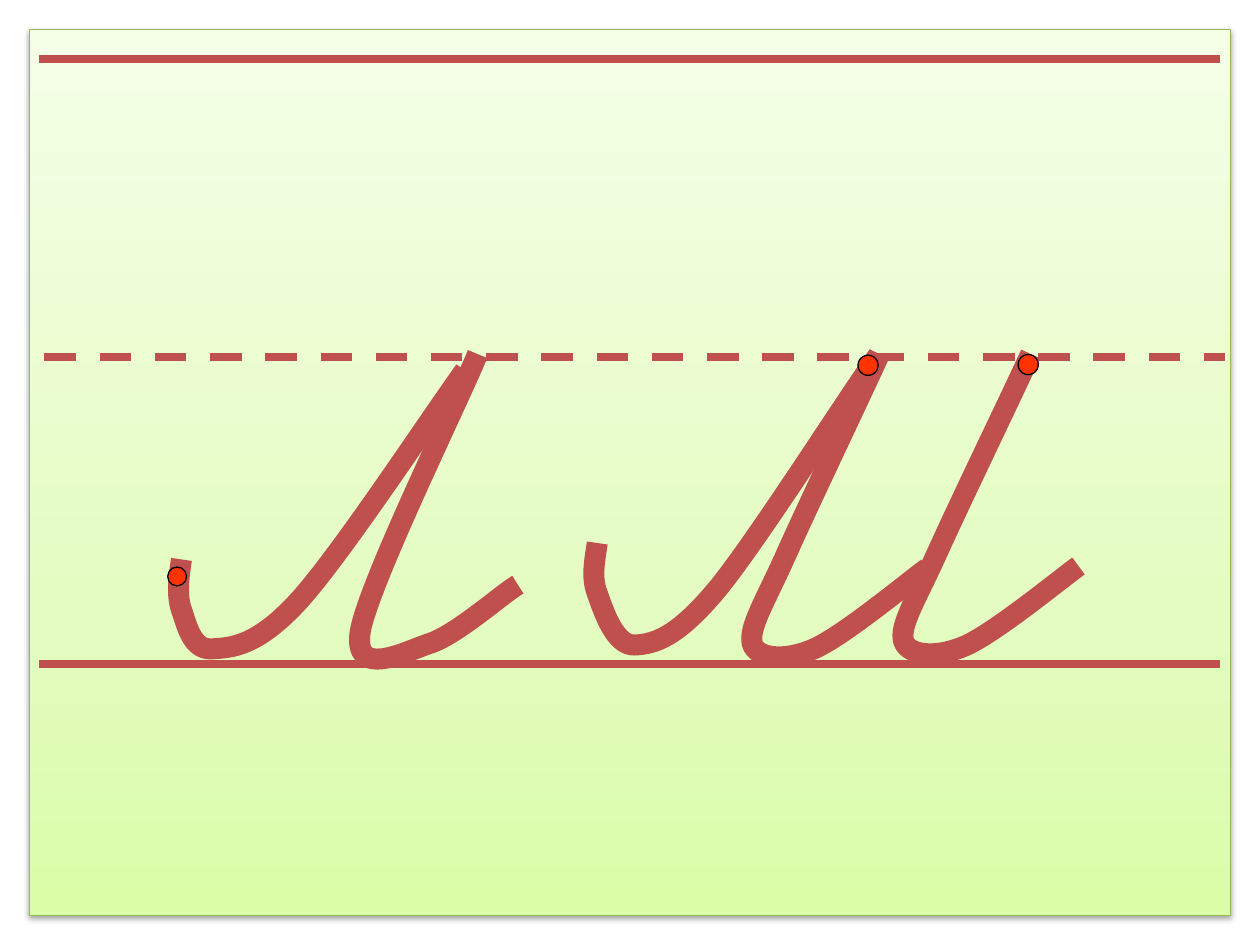
from copy import deepcopy

from lxml.etree import SubElement
from pptx import Presentation
from pptx.dml.color import RGBColor
from pptx.enum.dml import MSO_LINE
from pptx.enum.shapes import MSO_CONNECTOR, MSO_SHAPE
from pptx.oxml.ns import qn
from pptx.util import Pt

INK, DOT, BLACK = "C0504D", "FF3300", "000000"

# Pen strokes in points: a start, then three points for each Bezier segment
SHORT_RISE = [(2.9, 108), (1.4, 118.1), (0, 128.2), (2.9, 136.8),
              (5.8, 144.7), (8.6, 159.8), (20.2, 159.1),
              (31, 158.4), (45.4, 158.4), (69.8, 131.8),
              (93.6, 105.8), (144.7, 28.1), (164.9, 0)]
LONG_RISE = [(3.6, 107.3), (2.2, 117.4), (0, 126.7), (3.6, 136.1),
             (7.2, 146.2), (13.7, 166.3), (25.2, 165.6),
             (36.7, 164.9), (49, 161.3), (72, 133.9),
             (95, 105.8), (144.7, 27.4), (164.2, 0)]
NARROW_HOOK = [(94.3, 131.8), (85.7, 136.8), (58.3, 161.3), (43.2, 165.6),
               (28.8, 170.6), (0, 185.8), (4.3, 158.4),
               (9.4, 130.3), (60.5, 26.6), (71.3, 0)]
WIDE_HOOK = [(102.2, 122.4), (91.4, 130.3), (54, 161.3), (37.4, 168.5),
             (20.9, 175.7), (5, 174.2), (2.2, 165.6),
             (0, 156.2), (9.4, 141.8), (21.6, 114.5),
             (33.8, 87.1), (64.1, 23.8), (74.9, 0)]


def rgb(value):
    return RGBColor.from_string(value)


def set_line(shape, color, width):
    shape.line.color.rgb = rgb(color)
    shape.line.width = Pt(width)


def add_stroke(shapes, points, x, y, stretch=1):
    nodes = [(Pt(x + px), Pt(y + py * stretch)) for px, py in points]
    builder = shapes.build_freeform(*nodes[0])
    builder.add_line_segments(nodes[1:], close=False)
    sp = builder.convert_to_shape()
    # Turn each three line segments into one cubic curve
    outline = sp._element.spPr.find(".//" + qn("a:path"))
    for i, segment in enumerate(outline.findall(qn("a:lnTo"))):
        if i % 3 == 0:
            curve = SubElement(outline, qn("a:cubicBezTo"))
        curve.append(segment[0])
        outline.remove(segment)
    sp.shadow.inherit = False
    sp.fill.background()
    set_line(sp, INK, 12)


def add_dot(shapes, x, y, size):
    sp = shapes.add_shape(MSO_SHAPE.FLOWCHART_CONNECTOR,
                          Pt(x), Pt(y), Pt(size), Pt(size))
    sp.shadow.inherit = False
    sp.fill.solid()
    sp.fill.fore_color.rgb = rgb(DOT)
    set_line(sp, BLACK, 0.75)


def add_sheet(shapes, x, y, w, h):
    sp = shapes.add_shape(MSO_SHAPE.RECTANGLE, Pt(x), Pt(y), Pt(w), Pt(h))
    set_line(sp, "98B955", 0.75)
    # Three-stop gradient, running upwards
    sp.fill.gradient()
    sp.fill.gradient_angle = 90
    stop_list = sp._element.spPr.find(".//" + qn("a:gsLst"))
    stop_list.append(deepcopy(stop_list[0]))
    stops = [(0, "DAFDA7"), (0.35, "E4FCC2"), (1, "F5FFE7")]
    for stop, (position, color) in zip(sp.fill.gradient_stops, stops):
        stop.position = position
        stop.color.rgb = rgb(color)
    # Soft shadow below
    sp.shadow.inherit = False
    effects = sp._element.spPr.find(qn("a:effectLst"))
    shadow = SubElement(effects, qn("a:outerShdw"), blurRad=str(Pt(3.1)),
                        dist=str(Pt(1.6)), dir="5400000", rotWithShape="0")
    color = SubElement(shadow, qn("a:srgbClr"), val=BLACK)
    SubElement(color, qn("a:alpha"), val="38000")


def add_ruling(shapes, x, y, w):
    group = shapes.add_group_shape().shapes
    # Top line, dashed middle line, base line
    for dx, dy, dash in [(0, 0, None), (2.9, 170, MSO_LINE.DASH), (0, 345.6, None)]:
        line = group.add_connector(MSO_CONNECTOR.STRAIGHT, Pt(x + dx), Pt(y + dy),
                                   Pt(x + dx + w), Pt(y + dy))
        set_line(line, INK, 4.5)
        if dash:
            line.line.dash_style = dash
        SubElement(line._element.spPr, qn("a:effectLst"))


def add_two_part_letter(shapes, x, y):
    group = shapes.add_group_shape().shapes
    add_stroke(group, NARROW_HOOK, x + 100.8, y)
    add_stroke(group, SHORT_RISE, x, y + 9.4)
    add_dot(group, x - 5, y + 121.7, 10.8)


def add_three_part_letter(shapes, x, y):
    group = shapes.add_group_shape().shapes
    add_stroke(group, WIDE_HOOK, x + 90, y)
    add_stroke(group, WIDE_HOOK, x + 176.4, y, stretch=0.99)
    add_stroke(group, LONG_RISE, x, y + 0.7)
    for dx, dy in [(152.6, 0.7), (244.1, 0.3)]:
        add_dot(group, x + dx, y + dy, 11.5)


def main():
    prs = Presentation()
    prs.slide_width, prs.slide_height = Pt(720), Pt(540)
    s = prs.slides.add_slide(prs.slide_layouts[6])
    add_sheet(s.shapes, 16.8, 16.8, 686.2, 506.2)
    add_ruling(s.shapes, 22.5, 33.8, 674.6)
    add_three_part_letter(s.shapes, 337.7, 202.3)
    add_two_part_letter(s.shapes, 100.8, 202.3)
    prs.save("out.pptx")


if __name__ == "__main__":
    main()
